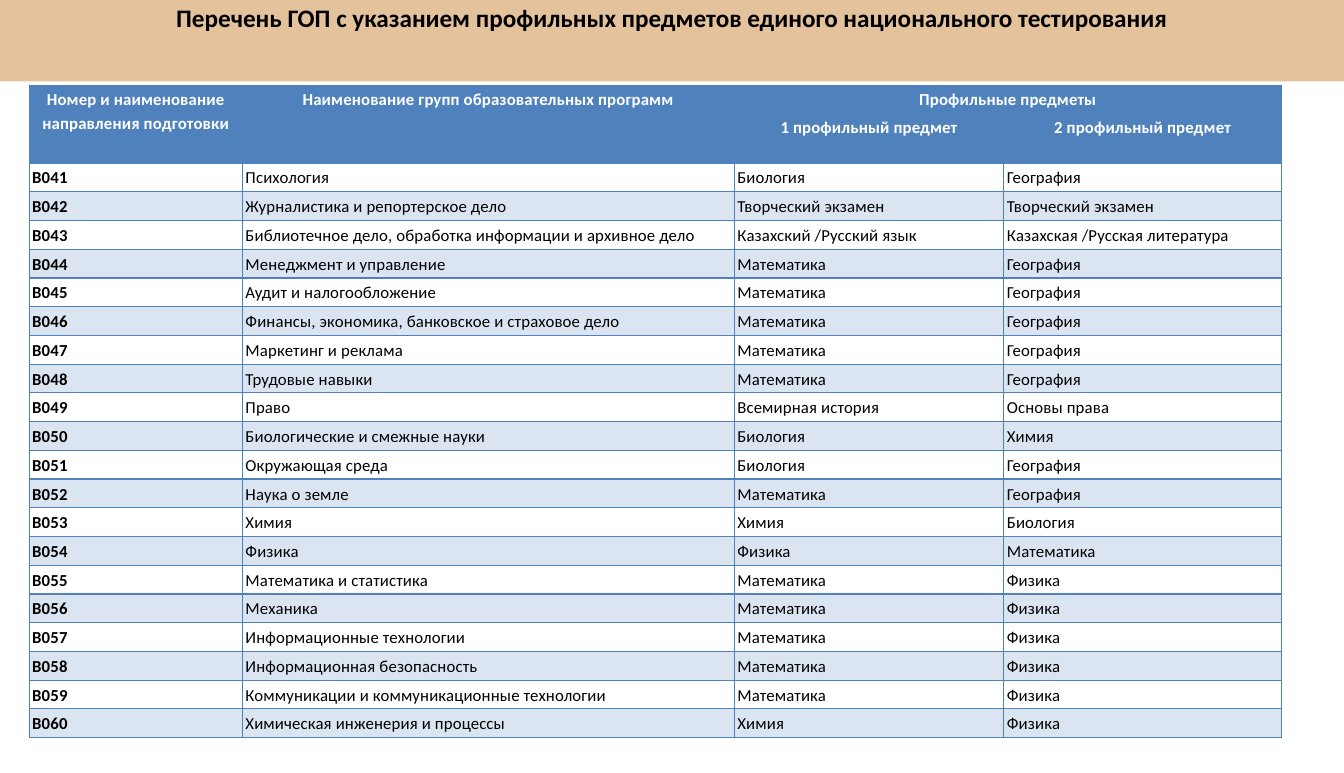
from dataclasses import dataclass

from lxml.etree import SubElement
from pptx import Presentation
from pptx.dml.color import RGBColor
from pptx.enum.shapes import MSO_SHAPE
from pptx.enum.text import MSO_ANCHOR, PP_ALIGN
from pptx.oxml.ns import qn
from pptx.util import Inches, Pt


@dataclass(frozen=True)
class Theme:
    font: str = "Calibri"
    title_size: float = 18
    table_size: float = 12
    band: str = "E4C29C"
    accent: str = "4F81BD"
    stripe_opacity: int = 20
    light: str = "FFFFFF"
    dark: str = "000000"


THEME = Theme()
SLIDE_WIDTH, SLIDE_HEIGHT = 13.35, 7.68

TITLE = "Перечень ГОП с указанием профильных предметов единого национального тестирования"
COLUMN_WIDTHS = (2.12, 4.89, 2.68, 2.76)
HEADER_HEIGHTS = (0.28, 0.49)
HEADER = (
    ("Номер и наименование направления подготовки",
     "Наименование групп образовательных программ", "Профильные предметы", ""),
    ("", "", "1 профильный предмет", "2 профильный предмет"),
)
FIRST_CODE = 41
PROGRAMS = (
    ("Психология", "Биология", "География"),
    ("Журналистика и репортерское дело", "Творческий экзамен", "Творческий экзамен"),
    ("Библиотечное дело, обработка информации и архивное дело",
     "Казахский /Русский язык", "Казахская /Русская литература"),
    ("Менеджмент и управление", "Математика", "География"),
    ("Аудит и налогообложение", "Математика", "География"),
    ("Финансы, экономика, банковское и страховое дело", "Математика", "География"),
    ("Маркетинг и реклама", "Математика", "География"),
    ("Трудовые навыки", "Математика", "География"),
    ("Право", "Всемирная история", "Основы права"),
    ("Биологические и смежные науки", "Биология", "Химия"),
    ("Окружающая среда", "Биология", "География"),
    ("Наука о земле", "Математика", "География"),
    ("Химия", "Химия", "Биология"),
    ("Физика", "Физика", "Математика"),
    ("Математика и статистика", "Математика", "Физика"),
    ("Механика", "Математика", "Физика"),
    ("Информационные технологии", "Математика", "Физика"),
    ("Информационная безопасность", "Математика", "Физика"),
    ("Коммуникации и коммуникационные технологии", "Математика", "Физика"),
    ("Химическая инженерия и процессы", "Химия", "Физика"),
)


def write(frame, text, *, size, color=THEME.dark, bold=False,
          align=PP_ALIGN.LEFT, line_spacing=1.0, tracking=0):
    """Tracking is in hundredths of a point."""
    paragraph = frame.paragraphs[0]
    paragraph.alignment = align
    paragraph.line_spacing = line_spacing
    run = paragraph.add_run()
    run.text = text
    run.font.name = THEME.font
    run.font.size = Pt(size)
    run.font.bold = bold
    run.font.color.rgb = RGBColor.from_string(color)
    if tracking:
        run.font._element.set("spc", str(tracking))


def set_insets(holder, side, top):
    holder.margin_left = holder.margin_right = Inches(side)
    holder.margin_top = holder.margin_bottom = Inches(top)


def fill_solid(target, color, opacity=100):
    target.fill.solid()
    target.fill.fore_color.rgb = RGBColor.from_string(color)
    if opacity < 100:
        props = target._tc.tcPr
        tint = props.find(f"{qn('a:solidFill')}/{qn('a:srgbClr')}")
        SubElement(tint, qn("a:alpha"), val=str(opacity * 1000))


def set_borders(cell, bottom_width=1):
    props = cell._tc.get_or_add_tcPr()
    for side, width in (("L", 1), ("R", 1), ("T", 1), ("B", bottom_width)):
        line = SubElement(props, qn(f"a:ln{side}"), w=str(Pt(width)))
        paint = SubElement(line, qn("a:solidFill"))
        SubElement(paint, qn("a:srgbClr"), val=THEME.accent)


def add_title(slide, left, top, width, height):
    # Coloured band across the slide
    band = slide.shapes.add_shape(MSO_SHAPE.RECTANGLE, Inches(left), Inches(top),
                                  Inches(width), Inches(height))
    band.shadow.inherit = False
    band.line.fill.background()
    fill_solid(band, THEME.band)
    # Heading in the upper part of the band
    heading = slide.shapes.add_textbox(Inches(left), Inches(top),
                                       Inches(width), Inches(height - 0.2))
    fill_solid(heading, THEME.band)
    frame = heading.text_frame
    frame.word_wrap = True
    frame.vertical_anchor = MSO_ANCHOR.TOP
    set_insets(frame, 0.12, 0.02)
    write(frame, TITLE, size=THEME.title_size, bold=True, align=PP_ALIGN.CENTER)


def format_header_cell(cell, text, bottom_width):
    set_insets(cell, 0.02, 0.01)
    set_borders(cell, bottom_width)
    fill_solid(cell, THEME.accent)
    if text:
        write(cell.text_frame, text, size=THEME.table_size, color=THEME.light, bold=True,
              align=PP_ALIGN.CENTER, line_spacing=1.15, tracking=10)


def format_program_cell(cell, text, is_code, striped):
    set_insets(cell, 0.03, 0.02)
    set_borders(cell)
    if striped:
        fill_solid(cell, THEME.accent, THEME.stripe_opacity)
    else:
        fill_solid(cell, THEME.light)
    write(cell.text_frame, text, size=THEME.table_size, bold=is_code,
          line_spacing=1.15, tracking=10)


def add_programs_table(slide, left, top, width, height):
    header_rows = len(HEADER)
    table = slide.shapes.add_table(header_rows + len(PROGRAMS), len(COLUMN_WIDTHS),
                                   Inches(left), Inches(top),
                                   Inches(width), Inches(height)).table
    table.first_row = table.horz_banding = False

    # Column widths and row heights
    scale = width / sum(COLUMN_WIDTHS)
    for column, share in zip(table.columns, COLUMN_WIDTHS):
        column.width = Inches(share * scale)
    program_height = (height - sum(HEADER_HEIGHTS)) / len(PROGRAMS)
    heights = HEADER_HEIGHTS + (program_height,) * len(PROGRAMS)
    for row, row_height in zip(table.rows, heights):
        row.height = Inches(row_height)

    # Two-level header
    for r, labels in enumerate(HEADER):
        for c, label in enumerate(labels):
            format_header_cell(table.cell(r, c), label, bottom_width=2 if c < 2 or r == 0 else 1)
    for c in (0, 1):
        table.cell(0, c).merge(table.cell(1, c))
    table.cell(0, 2).merge(table.cell(0, 3))

    # Programme groups, every second row tinted
    for i, program in enumerate(PROGRAMS):
        code = f"В{FIRST_CODE + i:03d}"
        for c, text in enumerate((code, *program)):
            format_program_cell(table.cell(header_rows + i, c), text,
                                is_code=c == 0, striped=i % 2 == 1)


def main():
    presentation = Presentation()
    presentation.slide_width = Inches(SLIDE_WIDTH)
    presentation.slide_height = Inches(SLIDE_HEIGHT)
    slide = presentation.slides.add_slide(presentation.slide_layouts[6])
    add_programs_table(slide, 0.29, 0.85, 12.44, 6.48)
    add_title(slide, 0, 0, SLIDE_WIDTH, 0.81)
    presentation.save("out.pptx")


if __name__ == "__main__":
    main()
